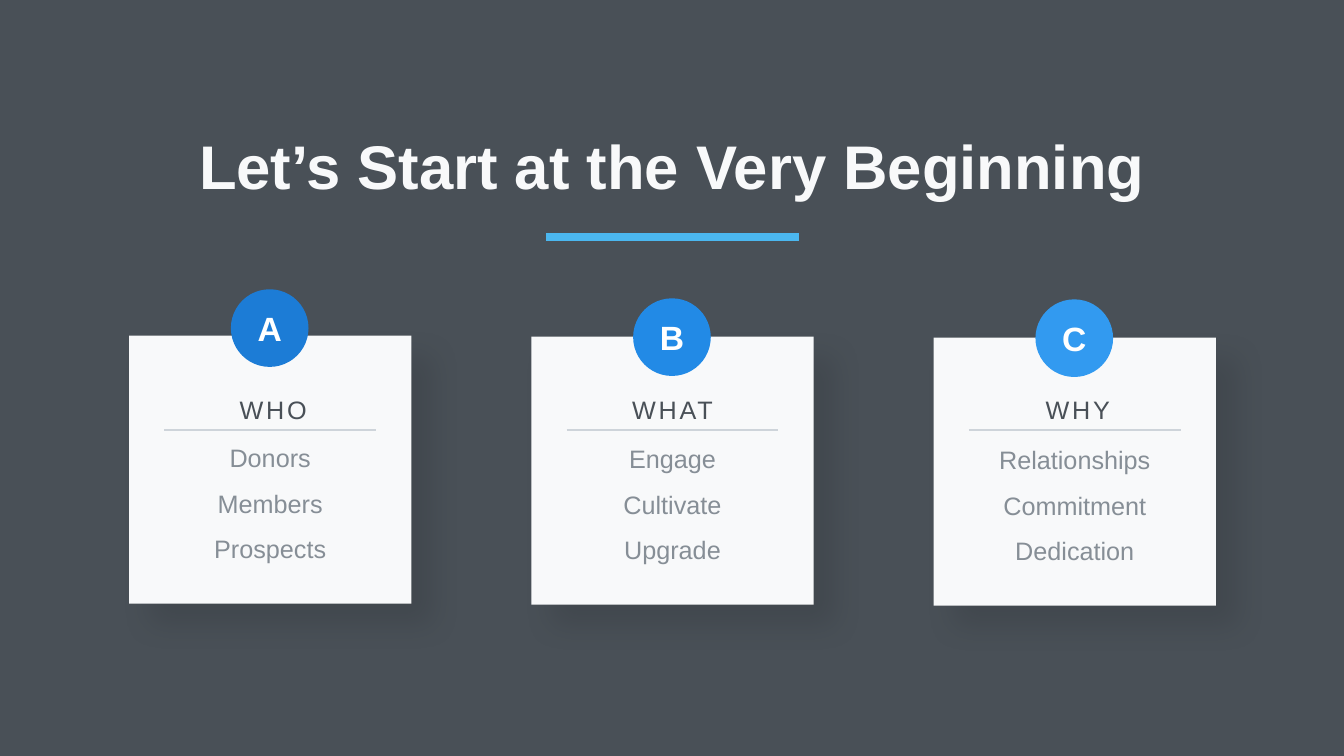
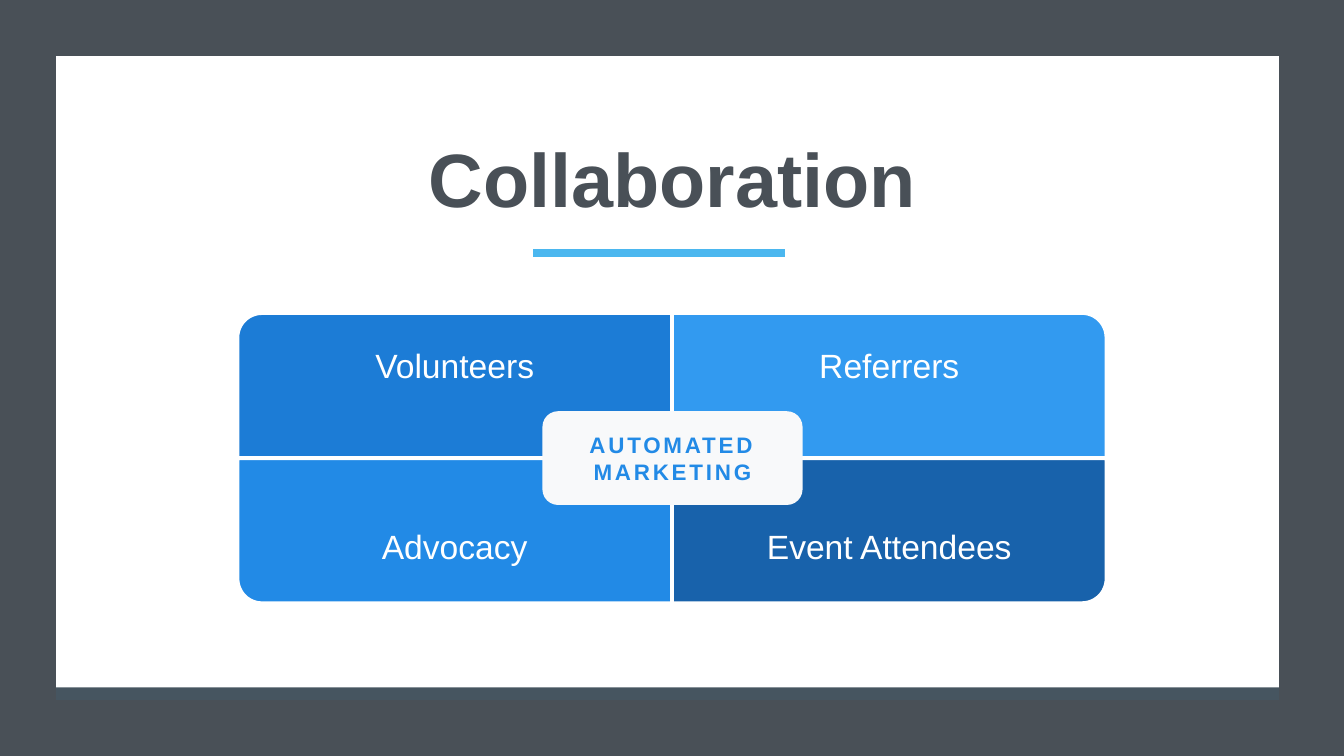
from dataclasses import dataclass

from lxml.etree import SubElement
from pptx import Presentation
from pptx.dml.color import RGBColor as RGB
from pptx.enum.shapes import MSO_CONNECTOR as Link, MSO_SHAPE as Kind
from pptx.enum.text import MSO_ANCHOR as Anchor, MSO_AUTO_SIZE as Fit, PP_ALIGN as Align
from pptx.oxml.ns import qn
from pptx.util import Inches, Pt


@dataclass(frozen=True)
class Theme:
    font: str = "Arial"
    slate: str = "495057"
    edge: str = "465560"
    white: str = "FFFFFF"
    pale: str = "F8F9FA"
    grey: str = "868E96"
    rule: str = "CED4DA"
    sky: str = "4BB7EF"
    navy: str = "1862AB"
    deep: str = "1C7CD6"
    blue: str = "228AE6"
    light: str = "329AF0"
    title: int = 44
    large: int = 54
    mark: int = 24
    body: int = 18
    hub: int = 16


look = Theme()


def write(shape, *lines, size, color, bold=False, gap=None, track=0,
          inset=0.05, foot=None, anchor=Anchor.MIDDLE):
    """Fill a shape with centred paragraphs in one format."""
    frame = shape.text_frame
    frame.word_wrap = True
    frame.auto_size = Fit.NONE
    frame.vertical_anchor = anchor
    frame.margin_left = frame.margin_right = frame.margin_top = Inches(inset)
    frame.margin_bottom = Inches(inset if foot is None else foot)
    for i, line in enumerate(lines):
        para = frame.add_paragraph() if i else frame.paragraphs[0]
        para.alignment = Align.CENTER
        para.line_spacing = gap
        run = para.add_run()
        run.text = line
        run.font.name = look.font
        run.font.size = Pt(size)
        run.font.bold = bold
        run.font.color.rgb = RGB.from_string(color)
        if track:
            run._r.get_or_add_rPr().set("spc", str(track * 100))


def draw(slide, kind, x, y, w, h, fill=None, line=None, width=0):
    """Add a flat preset shape, with a fill or a line where one is given."""
    shape = slide.shapes.add_shape(kind, Inches(x), Inches(y), Inches(w), Inches(h))
    shape.shadow.inherit = False
    if fill:
        shape.fill.solid()
        shape.fill.fore_color.rgb = RGB.from_string(fill)
    else:
        shape.fill.background()
    if line:
        shape.line.color.rgb = RGB.from_string(line)
        shape.line.width = Pt(width)
    else:
        shape.line.fill.background()
    return shape


deck = Presentation()
deck.slide_width, deck.slide_height = Inches(13.33), Inches(7.5)
start, team = [deck.slides.add_slide(deck.slide_layouts[5]) for _ in range(2)]
for slide, color in ((start, look.slate), (team, look.edge)):
    slide.background.fill.solid()
    slide.background.fill.fore_color.rgb = RGB.from_string(color)

# White panel and thick frame behind the second slide
draw(team, Kind.RECTANGLE, 0.47, 0.37, 12.29, 6.45, look.white)
draw(team, Kind.RECTANGLE, 0, 0, 13.24, 7.5, line=look.slate, width=80)

# Titles, brought in front of the panel
for slide, text, top, high, size, color in (
    (start, "Let’s Start at the Very Beginning", 1.3, 0.77, look.title, look.pale),
    (team, "Collaboration", 1.09, 1.45, look.large, look.slate),
):
    title = slide.shapes.title
    title.left, title.top = Inches(0.92), Inches(top)
    title.width, title.height = Inches(11.5), Inches(high)
    write(title, text, size=size, color=color, bold=True, gap=0.9)
    title._element.getparent().append(title._element)

# Three cards: badge, label and list
rules = [(start, 5.42, 2.35, 2.5, look.sky, 6), (team, 5.29, 2.51, 2.5, look.sky, 6)]
cards = (
    ("A", "WHO", ("Donors", "Members", "Prospects"), look.deep, 2.87, 2.71),
    ("B", "WHAT", ("Engage", "Cultivate", "Upgrade"), look.blue, 2.96, 6.67),
    ("C", "WHY", ("Relationships", "Commitment", "Dedication"), look.light, 2.97, 10.69),
)
for i, (mark, label, items, color, top, mid) in enumerate(cards):
    x = 1.28 + 3.99 * i
    card = draw(start, Kind.RECTANGLE, x, 3.33 + 0.01 * i, 2.8, 2.66, look.pale)
    write(card, *items, size=look.body, color=look.grey, gap=1.5,
          foot=0.4, anchor=Anchor.BOTTOM)
    # Soft shadow down to the right
    glow = SubElement(card._element.spPr.find(qn("a:effectLst")), qn("a:outerShdw"),
                      blurRad=str(Pt(21)), dist=str(Pt(21)), dir="2700000",
                      algn="tl", rotWithShape="0")
    tint = SubElement(glow, qn("a:srgbClr"), val="000000")
    SubElement(tint, qn("a:alpha"), val="10000")

    badge = draw(start, Kind.OVAL, x + 1.01, top, 0.77, 0.77, color)
    write(badge, mark, size=look.mark, color=look.white, bold=True)
    box = start.shapes.add_textbox(Inches(mid - 0.87), Inches(3.86), Inches(1.74), Inches(0.4))
    write(box, label, size=look.body, color=look.slate, track=2, anchor=Anchor.TOP)
    rules.append((start, x + 0.35, 4.27, 2.1, look.rule, 1.5))

# Accent bars and card rules
for slide, x, y, w, color, width in rules:
    bar = slide.shapes.add_connector(Link.STRAIGHT, Inches(x), Inches(y), Inches(x + w), Inches(y))
    bar.line.color.rgb = RGB.from_string(color)
    bar.line.width = Pt(width)
    SubElement(bar._element.spPr, qn("a:effectLst"))

# Four quarters around a centre, each turned so its round corner is outside
wide, high, text_h = 4.3, 1.43, 1.07
quads = (
    ("Volunteers", 0, 0, 270, look.deep),
    ("Referrers", 1, 0, 0, look.light),
    ("Advocacy", 0, 1, 180, look.blue),
    ("Event Attendees", 1, 1, 90, look.navy),
)
for text, col, row, turn, color in quads:
    x, y = 2.36 + 4.31 * col, 3.11 + 1.44 * row
    w, h = (high, wide) if turn % 180 else (wide, high)
    quad = draw(team, Kind.ROUND_1_RECTANGLE, x + (wide - w) / 2, y + (high - h) / 2,
                w, h, color, look.white, 2)
    quad.rotation = turn
    box = team.shapes.add_textbox(Inches(x), Inches(y + row * (high - text_h)),
                                  Inches(wide), Inches(text_h))
    write(box, text, size=look.mark, color=look.white, gap=0.9, inset=0.19)

# Hub over the centre
hub = draw(team, Kind.ROUNDED_RECTANGLE, 5.38, 4.08, 2.58, 0.93, look.pale)
write(hub, "AUTOMATED MARKETING", size=look.hub, color=look.blue, bold=True,
      track=2, inset=0.11)

deck.save("out.pptx")
